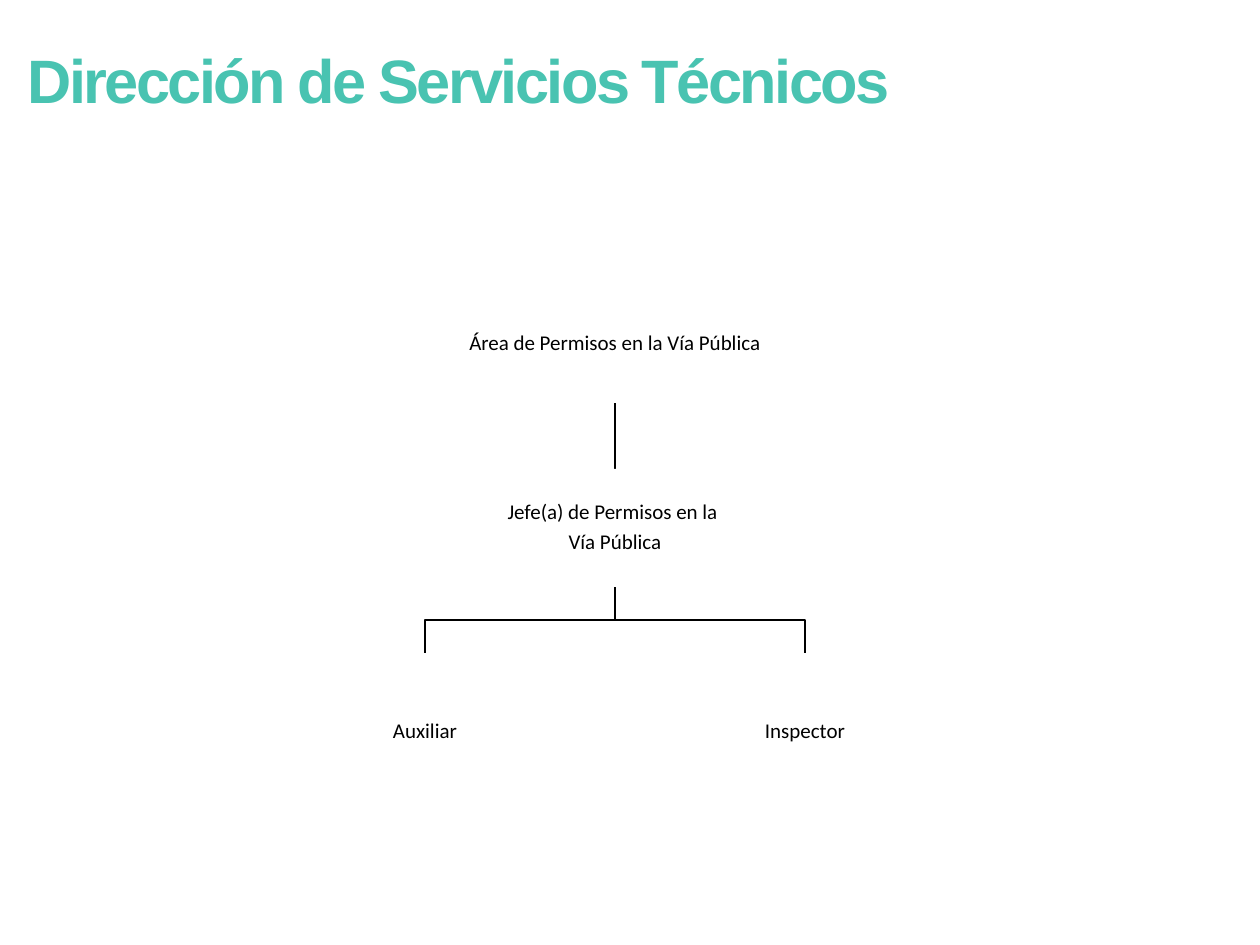
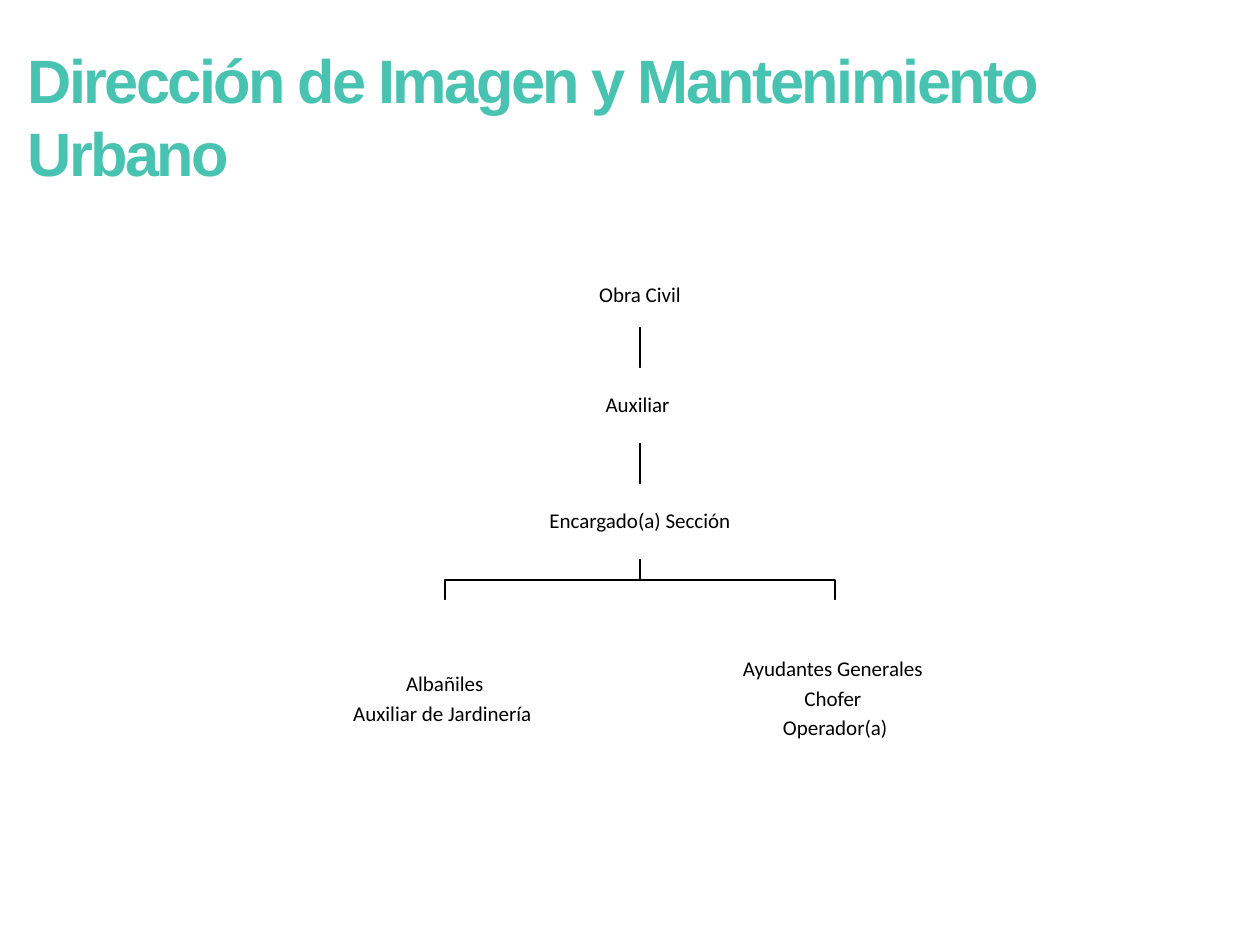
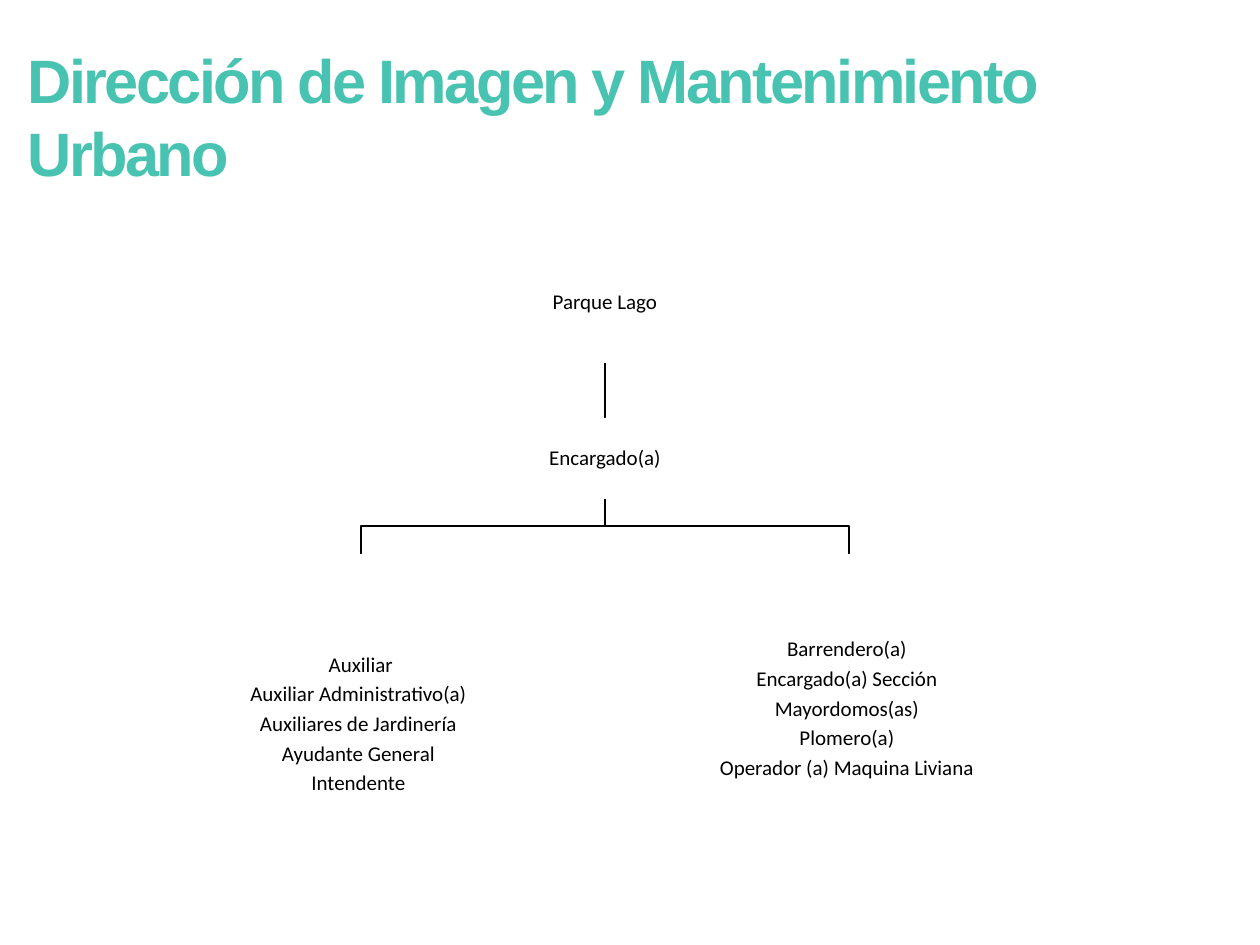
from dataclasses import dataclass

from lxml import etree
from pptx import Presentation
from pptx import util as u
from pptx.dml.color import RGBColor
from pptx.enum import shapes, text
from pptx.oxml.ns import qn


@dataclass(frozen=True)
class Theme:
    title_color: RGBColor = RGBColor(0x49, 0xC3, 0xB1)
    ink: RGBColor = RGBColor(0, 0, 0)
    paper: RGBColor = RGBColor(255, 255, 255)
    title_font: str = "Arial"
    body_font: str = "Calibri"
    title_size: int = 35
    body_size: int = 12
    title_spacing: int = -150
    line_width: int = 1


THEME = Theme()
EMU_PER_PX = 914400 / 126
LINE_PITCH = 30


def px(n):
    return round(n * EMU_PER_PX)


def add_run(p, words, font, size, color, bold=False):
    r = p.add_run()
    r.text = words
    r.font.name = font
    r.font.size = u.Pt(size)
    r.font.bold = bold
    r.font.color.rgb = color
    return r


def add_title(s, words, box):
    sp = s.shapes.add_textbox(*map(px, box))
    tf = sp.text_frame
    tf.word_wrap = True
    tf.auto_size = text.MSO_AUTO_SIZE.SHAPE_TO_FIT_TEXT
    r = add_run(tf.paragraphs[0], words, THEME.title_font, THEME.title_size,
                THEME.title_color, bold=True)
    r.font._element.set("spc", str(THEME.title_spacing))


def style_line(sp):
    sp.line.color.rgb = THEME.ink
    sp.line.width = u.Pt(THEME.line_width)


def add_stem(s, x, top, bottom):
    line = s.shapes.add_connector(shapes.MSO_CONNECTOR.STRAIGHT,
                                  px(x), px(top), px(x), px(bottom))
    style_line(line)
    etree.SubElement(line._element.spPr, qn("a:effectLst"))


def add_elbow(s, x, top, end_x, bottom):
    middle = (top + bottom) / 2
    outline = s.shapes.build_freeform(x, top, scale=EMU_PER_PX)
    outline.add_line_segments([(x, middle), (end_x, middle), (end_x, bottom)],
                              close=False)
    sp = outline.convert_to_shape()
    sp.shadow.inherit = False
    sp.fill.background()
    style_line(sp)


def add_post(s, lines, box, pad_top=0, pad_bottom=0):
    sp = s.shapes.add_shape(shapes.MSO_SHAPE.RECTANGLE, *map(px, box))
    sp.shadow.inherit = False
    sp.fill.solid()
    sp.fill.fore_color.rgb = THEME.paper
    sp.line.fill.background()
    tf = sp.text_frame
    tf.word_wrap = True
    tf.vertical_anchor = text.MSO_ANCHOR.MIDDLE
    tf.margin_left = tf.margin_right = px(1)
    tf.margin_top, tf.margin_bottom = px(1 + pad_top), px(1 + pad_bottom)
    for i, words in enumerate(lines):
        p = tf.add_paragraph() if i else tf.paragraphs[0]
        p.alignment = text.PP_ALIGN.CENTER
        p.line_spacing = 0.9
        p.space_after = u.Pt(4)
        add_run(p, words, THEME.body_font, THEME.body_size, THEME.ink)


def add_org_chart(s, box, gap, chain, leaves):
    left, top, width, height = box
    center = left + width / 2
    leaf_width = (width - gap) / 2
    posts = []
    y = top
    for i, (lines, w, h) in enumerate(chain):
        if i:
            add_stem(s, center, y - gap, y)
        posts.append((lines, (center - w / 2, y, w, h)))
        y += h + gap
    for i, (lines, *pads) in enumerate(leaves):
        x = left + i * (leaf_width + gap)
        add_elbow(s, center, y - gap, x + leaf_width / 2, y)
        posts.append((lines, (x, y, leaf_width, top + height - y), *pads))
    for post in posts:
        add_post(s, *post)


URBAN_IMAGE = "Dirección de Imagen y Mantenimiento Urbano"

SLIDES = [
    dict(title="Dirección de Servicios Técnicos", title_height=87,
         box=(268, 285, 694, 525), gap=66,
         chain=[(["Área de Permisos en la Vía Pública"], 314, 118),
                (["Jefe(a) de Permisos en la ", "Vía Pública"], 314, 118)],
         leaves=[(["Auxiliar"],), (["Inspector"],)]),
    dict(title=URBAN_IMAGE, title_height=161,
         box=(270, 264, 740, 565), gap=41,
         chain=[(["Obra Civil"], 194, 63),
                (["Auxiliar "], 194, 75),
                (["Encargado(a) Sección"], 252, 75)],
         leaves=[(["Albañiles", "Auxiliar de Jardinería "], 0, LINE_PITCH),
                 (["Ayudantes Generales ", "Chofer ", "Operador(a)"],
                  0, LINE_PITCH)]),
    dict(title=URBAN_IMAGE, title_height=161,
         box=(144, 243, 922, 622), gap=55,
         chain=[(["Parque Lago"], 328, 120),
                (["Encargado(a)"], 262, 81)],
         leaves=[(["Auxiliar", "Auxiliar Administrativo(a) ",
                   "Auxiliares de Jardinería ", "Ayudante General ",
                   "Intendente "], LINE_PITCH),
                 (["Barrendero(a) ", "Encargado(a) Sección ",
                   "Mayordomos(as) ", "Plomero(a) ",
                   "Operador (a) Maquina Liviana "],)]),
]


def add_org_slide(prs, title, title_height, box, gap, chain, leaves):
    s = prs.slides.add_slide(prs.slide_layouts[6])
    add_title(s, title, (15, 36, 1037, title_height))
    add_org_chart(s, box, gap, chain, leaves)


def main():
    prs = Presentation()
    prs.slide_width, prs.slide_height = px(1260), px(945)
    for content in SLIDES:
        add_org_slide(prs, **content)
    prs.save("out.pptx")


if __name__ == "__main__":
    main()
